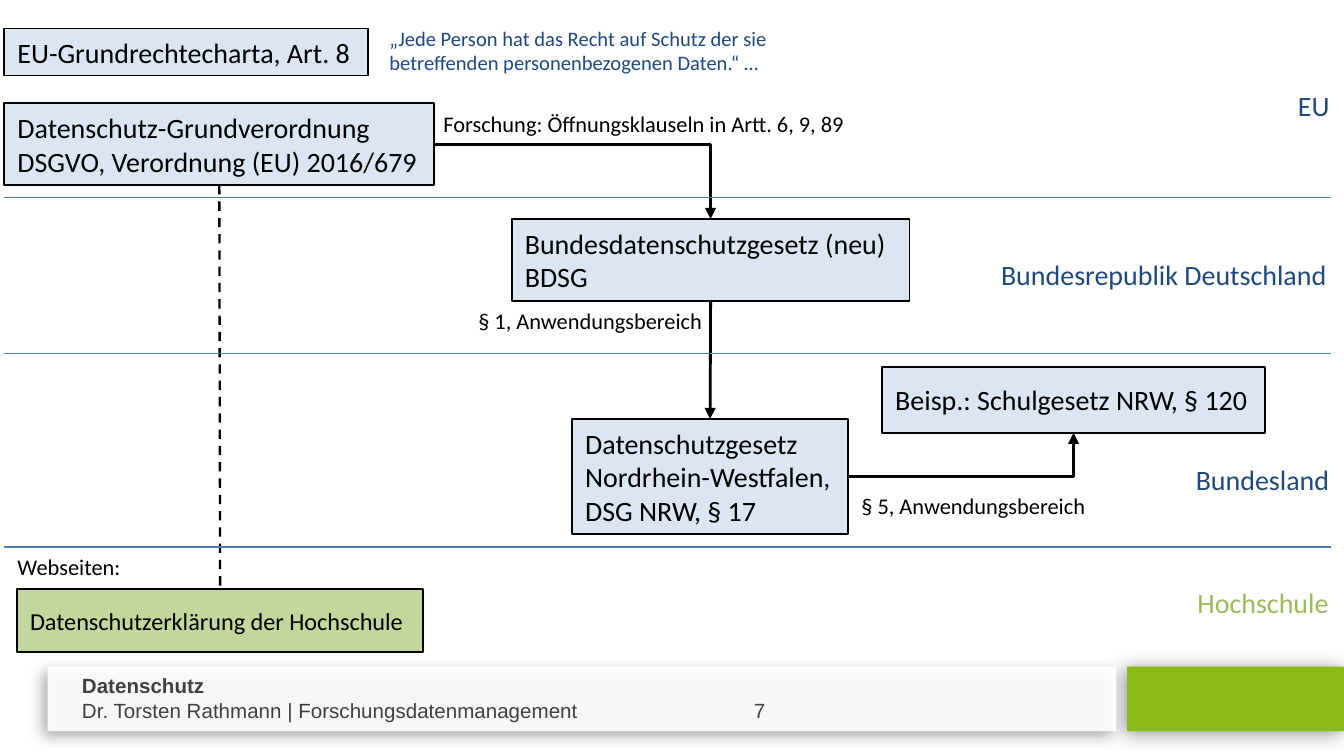
import pptx
import pptx.util
import pptx.dml.color
import pptx.enum.dml
import pptx.enum.shapes
import pptx.enum.text
import pptx.oxml
import pptx.oxml.ns
from lxml import etree

Cm, Pt, RGB = pptx.util.Cm, pptx.util.Pt, pptx.dml.color.RGBColor
qn = pptx.oxml.ns.qn

BLACK = RGB(0x00, 0x00, 0x00)
WHITE = RGB(0xFF, 0xFF, 0xFF)
GREY = RGB(0x40, 0x40, 0x40)
NAVY = RGB(0x1F, 0x49, 0x7D)
RULE_BLUE = RGB(0x4B, 0x7E, 0xBC)
LIGHT_BLUE = RGB(0xDC, 0xE6, 0xF2)
LIGHT_GREEN = RGB(0xC3, 0xD6, 0x9B)
LABEL_GREEN = RGB(0x9B, 0xBB, 0x59)
BAR_GREEN = RGB(0x89, 0xBA, 0x17)

TOP, LEFT, BOTTOM, RIGHT = range(4)


class Deck:
    """Holds the style and the current slide."""
    font = "Calibri"

    def __init__(self, width, height):
        self.prs = pptx.Presentation()
        self.prs.slide_width, self.prs.slide_height = Cm(width), Cm(height)
        self.slide = self.prs.slides.add_slide(self.prs.slide_layouts[6])

    def set_text(self, sp, lines, size, color, wrap, font=None):
        tf = sp.text_frame
        tf.word_wrap = wrap
        tf.auto_size = pptx.enum.text.MSO_AUTO_SIZE.SHAPE_TO_FIT_TEXT
        for i, line in enumerate(lines):
            p = tf.paragraphs[0] if i == 0 else tf.add_paragraph()
            p.text = line
            p.alignment = pptx.enum.text.PP_ALIGN.LEFT
            p.font.name = font or self.font
            p.font.size = Pt(size)
            p.font.color.rgb = color
        return tf

    def rect(self, at, fill):
        sp = self.slide.shapes.add_shape(
            pptx.enum.shapes.MSO_SHAPE.RECTANGLE, *map(Cm, at))
        sp.shadow.inherit = False
        sp.fill.solid()
        sp.fill.fore_color.rgb = fill
        sp.line.fill.background()
        return sp

    def box(self, at, *lines, size=15, fill=LIGHT_BLUE, width=1, pad=0.13, wrap=False):
        sp = self.rect(at, fill)
        sp.line.color.rgb = BLACK
        sp.line.width = Pt(width)
        tf = self.set_text(sp, lines, size, BLACK, wrap)
        tf.margin_top = tf.margin_bottom = Cm(pad)
        return sp

    def label(self, at, *lines, size=12, color=BLACK, wrap=False, font=None):
        sp = self.slide.shapes.add_textbox(*map(Cm, at))
        return self.set_text(sp, lines, size, color, wrap, font)

    def bar(self, at, fill, opacity, shadow, blur, dist, angle):
        sp = self.rect(at, fill)
        color = sp._element.spPr.find(qn("a:solidFill"))[0]
        etree.SubElement(color, qn("a:alpha"), val=str(opacity * 1000))
        effects = sp._element.spPr.find(qn("a:effectLst"))
        outer = etree.SubElement(
            effects, qn("a:outerShdw"), blurRad=str(Pt(blur)), dist=str(Pt(dist)),
            dir=str(angle * 60000), algn="tl", rotWithShape="0")
        black = etree.SubElement(outer, qn("a:srgbClr"), val="000000")
        etree.SubElement(black, qn("a:alpha"), val=str(shadow * 1000))

    def line(self, ends, color, width):
        sp = self.slide.shapes.add_connector(
            pptx.enum.shapes.MSO_CONNECTOR.STRAIGHT, *map(Cm, ends))
        sp.line.color.rgb = color
        sp.line.width = Pt(width)
        etree.SubElement(sp._element.spPr, qn("a:effectLst"))
        return sp

    def link(self, start, start_side, end, end_side, width=1.5, bent=False, arrow=True):
        sp = self.line((0, 0, 1, 1), BLACK, width)
        sp.begin_connect(start, start_side)
        sp.end_connect(end, end_side)
        if bent:
            sp._element.spPr.find(qn("a:prstGeom")).set("prst", "bentConnector2")
        if arrow:
            ln = sp._element.spPr.find(qn("a:ln"))
            etree.SubElement(ln, qn("a:tailEnd"), type="triangle")
        return sp


def main():
    deck = Deck(25.4, 14.29)

    # Footer
    deck.bar((21.3, 12.6, 4.1, 1.22), BAR_GREEN, 100, 42, 10.8, 2, 142)
    deck.bar((0.9, 12.6, 20.2, 1.22), WHITE, 91, 34, 7.5, 4, 145)
    footer = deck.label((1.3, 12.6, 15.19, 1.19), "Datenschutz",
                        "Dr. Torsten Rathmann | Forschungsdatenmanagement\t7",
                        size=11, color=GREY, wrap=True, font="Arial")
    title, author = footer.paragraphs
    title.font.bold = True
    tabs = etree.Element(qn("a:tabLst"))
    etree.SubElement(tabs, qn("a:tab"), pos=str(Cm(12.7)), algn="l")
    author._p.get_or_add_pPr().insert(0, tabs)

    # Laws and regulations
    deck.box((0.08, 0.54, 6.87, 0.89), "EU-Grundrechtecharta, Art. 8")
    gdpr = deck.box((0.08, 1.95, 8.13, 1.55), "Datenschutz-Grundverordnung",
                    "DSGVO, Verordnung (EU) 2016/679")
    federal = deck.box((9.67, 4.14, 7.52, 1.55), "Bundesdatenschutzgesetz (neu)",
                       "BDSG", wrap=True)
    state = deck.box((10.81, 7.92, 5.22, 2.18), "Datenschutzgesetz",
                     "Nordrhein-Westfalen,", "DSG NRW, § 17")
    school = deck.box((16.67, 6.93, 7.24, 1.25), "Beisp.: Schulgesetz NRW, § 120",
                      pad=0.3)
    privacy = deck.box((0.32, 11.14, 7.68, 1.18), "Datenschutzerklärung der Hochschule",
                       size=13, fill=LIGHT_GREEN, width=1.25, pad=0.3)

    # Links between them
    deck.link(gdpr, RIGHT, federal, TOP, bent=True)
    deck.link(federal, BOTTOM, state, TOP)
    deck.link(state, RIGHT, school, BOTTOM, bent=True)
    dashed = deck.link(gdpr, BOTTOM, privacy, TOP, width=1.25, arrow=False)
    dashed.line.dash_style = pptx.enum.dml.MSO_LINE.DASH

    # Notes on the links
    deck.label((8.13, 1.95, 8.69, 0.77),
               "Forschung: Öffnungsklauseln in Artt. 6, 9, 89", wrap=True)
    deck.label((8.79, 5.69, 4.9, 0.77), "§ 1, Anwendungsbereich", wrap=True)
    deck.label((16.03, 9.17, 4.8, 0.77), "§ 5, Anwendungsbereich", wrap=True)
    deck.label((0.08, 10.34, 2.59, 0.77), "Webseiten:")
    deck.label((7.11, 0.36, 7.8, 1.19), "„Jede Person hat das Recht auf Schutz der sie",
               "betreffenden personenbezogenen Daten.“ …", size=11, color=NAVY)

    # Levels of legislation
    for y in (3.73, 6.68, 10.34):
        deck.line((0.08, y, 25.15, y), RULE_BLUE, 0.75)
    for x, y, width, name, color in (
            (24.28, 1.55, 1.12, "EU", NAVY),
            (18.67, 4.75, 6.73, "Bundesrepublik Deutschland", NAVY),
            (22.35, 8.61, 3.05, "Bundesland", NAVY),
            (22.38, 10.95, 3.02, "Hochschule", LABEL_GREEN)):
        deck.label((x, y, width, 0.89), name, size=15, color=color)

    deck.prs.save("out.pptx")


if __name__ == "__main__":
    main()
